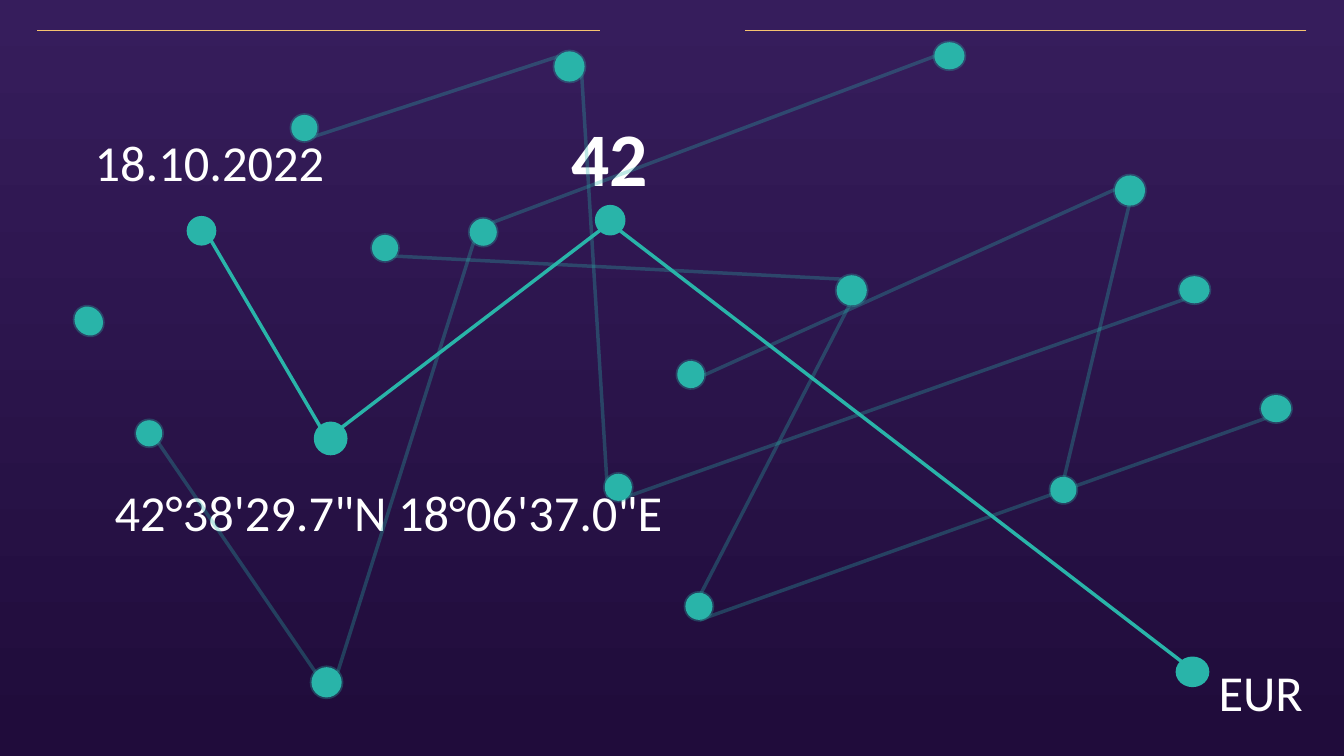
import pptx
import pptx.util
import pptx.dml.color
import pptx.enum.shapes
import pptx.enum.text
import pptx.oxml
import pptx.oxml.ns

Pt = pptx.util.Pt
COLORS = {"teal": "29B4A9", "gold": "F6C370", "text": "FFFFFF",
          "sky_top": "361D5C", "sky_bottom": "200C3B"}
DOT_SIZES = [(18.7, 18.7), (21.6, 21.6), (19.4, 19.4), (21.6, 19.4)]


def rgb(name):
    return pptx.dml.color.RGBColor.from_string(COLORS[name])


def style_line(item, color, width, opacity=100):
    item.line.color.rgb = rgb(color)
    item.line.width = Pt(width)
    properties = item.element.spPr
    if properties.find(pptx.oxml.ns.qn("a:effectLst")) is None:
        pptx.oxml.ns.qn("a:effectLst")
        effects = properties.makeelement(pptx.oxml.ns.qn("a:effectLst"), {})
        properties.append(effects)
    if opacity < 100:
        tint = properties.find(".//" + pptx.oxml.ns.qn("a:ln") + "//" + pptx.oxml.ns.qn("a:srgbClr"))
        alpha = tint.makeelement(pptx.oxml.ns.qn("a:alpha"), {"val": str(opacity * 1000)})
        tint.append(alpha)


def draw_constellation(canvas, dots, links, opacity=100, rotation=0):
    for (left, top), (width, height) in zip(dots, DOT_SIZES):
        dot = canvas.add_shape(pptx.enum.shapes.MSO_SHAPE.OVAL,
                               Pt(left), Pt(top), Pt(width), Pt(height))
        dot.rotation = rotation
        dot.shadow.inherit = False
        dot.fill.solid()
        dot.fill.fore_color.rgb = rgb("teal")
        style_line(dot, "teal", 2.5, opacity)
    for ends in links:
        link = canvas.add_connector(pptx.enum.shapes.MSO_CONNECTOR.STRAIGHT,
                                    *[Pt(value) for value in ends])
        style_line(link, "teal", 2.5, opacity)


deck = pptx.Presentation()
deck.slide_width = Pt(960)
deck.slide_height = Pt(540)
slide = deck.slides.add_slide(deck.slide_layouts[6])

sky = slide.background.fill
sky.gradient()
sky.gradient_angle = 270
for stop, color, position in zip(sky.gradient_stops, ["sky_top", "sky_bottom"], [0, 0.98]):
    stop.color.rgb = rgb(color)
    stop.position = position

for start, end in [(428.4, 26.6), (933.1, 532.1)]:
    header_rule = slide.shapes.add_connector(pptx.enum.shapes.MSO_CONNECTOR.STRAIGHT,
                                             Pt(start), Pt(21.6), Pt(end), Pt(21.6))
    style_line(header_rule, "gold", 0.5)

draw_constellation(
    slide.shapes,
    [(134.6, 155.5), (225.4, 302.4), (426.2, 147.6), (841, 470.2)],
    [(442.1, 164.2, 844.6, 473), (150.5, 171.4, 229, 305.3), (244.1, 305.3, 429.1, 164.2)])

facts = [
    ("42", 401, 75.6, 69.8, 72.7, 54, True),
    ("EUR", 863.3, 468.7, 75.6, 51.1, 36, None),
    ("18.10.2022", 60.5, 90, 180.7, 51.1, 36, None),
    ("42°38'29.7\"N 18°06'37.0\"E", 74.9, 339.8, 410.4, 51.1, 36, None),
]
for wording, left, top, width, height, size, bold in facts:
    fact = slide.shapes.add_textbox(Pt(left), Pt(top), Pt(width), Pt(height))
    fact.text_frame.word_wrap = False
    fact.text_frame.auto_size = pptx.enum.text.MSO_AUTO_SIZE.SHAPE_TO_FIT_TEXT
    run = fact.text_frame.paragraphs[0].add_run()
    run.text = wording
    run.font.name = "Calibri"
    run.font.size = Pt(size)
    run.font.bold = bold
    run.font.color.rgb = rgb("text")

faint_constellations = [
    ([(97.2, 300.2), (222.5, 476.6), (335.5, 156.2), (667.4, 30.2)],
     [(351.4, 159.1, 667.4, 40.3), (113, 316.1, 225.4, 480.2), (241.2, 480.2, 338.4, 172.8)], 0),
    ([(265.7, 167.8), (597.6, 196.6), (489.6, 423.4), (900.7, 282.2)],
     [(499.7, 442.8, 922.3, 292.3), (281.5, 182.9, 601.2, 199.4), (616.3, 199.4, 492.5, 439.9)], 0),
    ([(208.1, 82.1), (396, 36.7), (432, 338.4), (842.4, 197.3)],
     [(441.4, 357.1, 864, 207.4), (223.2, 97.9, 398.9, 40.3), (414.7, 40.3, 434.2, 355)], 0),
    ([(750.2, 340.6), (796.3, 125.3), (483.8, 257.8), (52.6, 219.6)],
     [(760.3, 340.6, 806.4, 146.9), (796.3, 135.4, 503.3, 267.8)], 228),
]
for dots, links, rotation in faint_constellations:
    constellation = slide.shapes.add_group_shape()
    draw_constellation(constellation.shapes, dots, links, 30, rotation)

deck.save("out.pptx")
